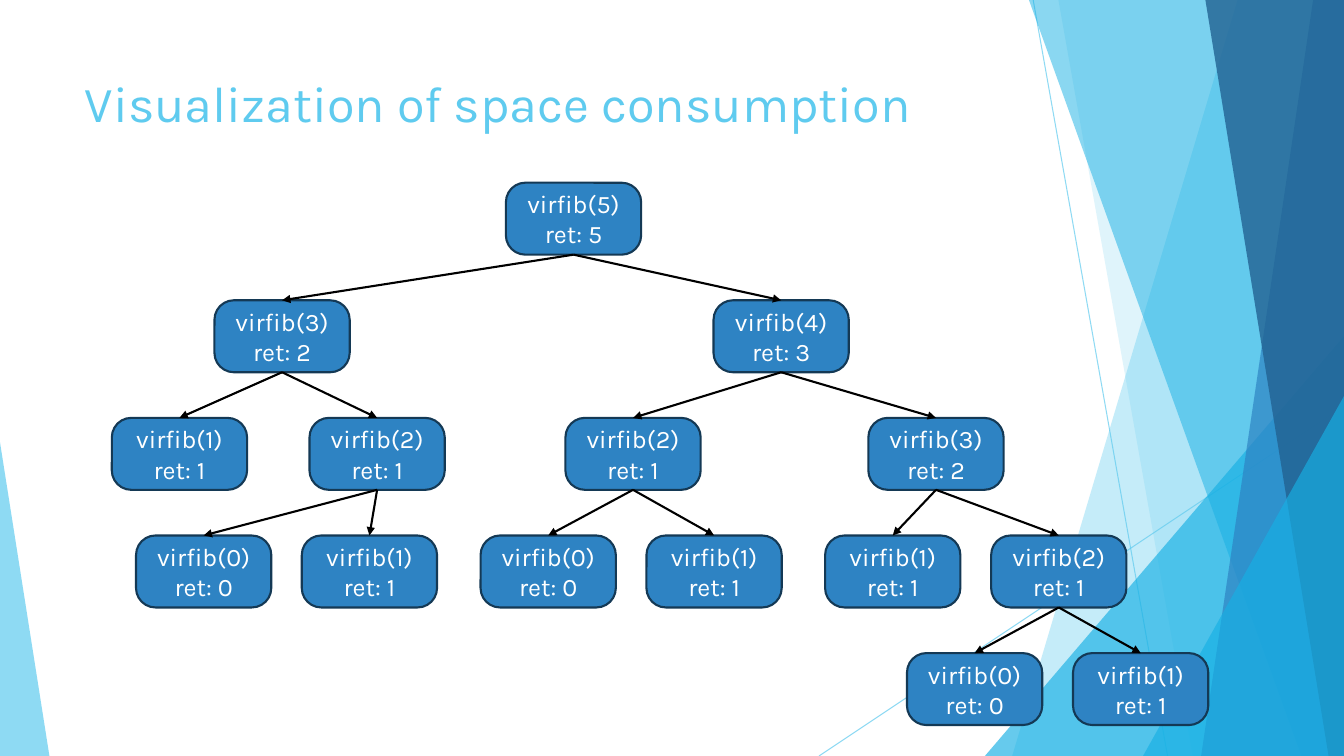
from collections import namedtuple

from lxml.etree import SubElement
from pptx import Presentation
from pptx.dml.color import RGBColor
from pptx.enum.shapes import MSO_CONNECTOR, MSO_SHAPE
from pptx.enum.text import MSO_ANCHOR, MSO_AUTO_SIZE, PP_ALIGN
from pptx.oxml.ns import qn
from pptx.util import Pt

Box = namedtuple("Box", "left top width height")
Call = namedtuple("Call", "number center children", defaults=[()])

COLORS = {
    "sky": "5FCBEF",
    "cyan": "17B0E4",
    "blue": "2E83C3",
    "navy": "226292",
    "outline": "143955",
    "black": "000000",
    "white": "FFFFFF",
}
TITLE_FONT = {"name": "Karla", "size": Pt(36), "bold": False}
NODE_FONT = {"name": "Karla", "size": Pt(18), "bold": False}
TITLE_FRAME = {
    "word_wrap": True,
    "auto_size": MSO_AUTO_SIZE.NONE,
    "vertical_anchor": MSO_ANCHOR.TOP,
}
NODE_FRAME = {"word_wrap": True, "vertical_anchor": MSO_ANCHOR.MIDDLE}
NODE_WIDTH, NODE_HEIGHT, LEVEL_STEP = 96.6, 51.4, 84

CALL_TREE = Call(5, 329.7, (
    Call(3, 121.5, (
        Call(1, 48.2),
        Call(2, 189.4, (Call(0, 65.5), Call(1, 183.9))),
    )),
    Call(4, 478, (
        Call(2, 372.2, (Call(0, 311.6), Call(1, 430.1))),
        Call(3, 588.6, (
            Call(1, 557.7),
            Call(2, 676.3, (Call(0, 616.2), Call(1, 734.8))),
        )),
    )),
))


def set_values(target, values):
    """Set each named attribute on the target."""
    for name, value in values.items():
        setattr(target, name, value)


def set_color(fill, color, opacity=100):
    """Make a fill solid with a palette colour and an opacity in percent."""
    fill.solid()
    fill.fore_color.rgb = RGBColor.from_string(COLORS[color])
    if opacity < 100:
        choice = fill._xPr.find(qn("a:solidFill"))[0]
        SubElement(choice, qn("a:alpha"), val=str(opacity * 1000))


def add_line(slide, ends, color, width, opacity=100):
    """Add a flat straight connector between two points."""
    line = slide.shapes.add_connector(
        MSO_CONNECTOR.STRAIGHT, *[Pt(value) for value in ends])
    set_color(line.line.fill, color, opacity)
    line.line.width = Pt(width)
    SubElement(line._element.spPr, qn("a:effectLst"))
    return line


def finish_panel(panel, color, opacity):
    """Give a background panel its translucent fill and no outline."""
    panel.shadow.inherit = False
    set_color(panel.fill, color, opacity)
    panel.line.fill.background()


def add_slanted_panel(slide, box, top_x, bottom_x, color, opacity):
    """Add a panel with a slanted left edge that fills the box to its right."""
    right, bottom = box.left + box.width, box.top + box.height
    builder = slide.shapes.build_freeform(
        Pt(box.left + top_x), Pt(box.top), scale=1.0)
    corners = [(right, box.top), (right, bottom), (box.left + bottom_x, bottom)]
    builder.add_line_segments([(Pt(x), Pt(y)) for x, y in corners], close=True)
    finish_panel(builder.convert_to_shape(), color, opacity)


def add_corner_triangle(slide, box, width, height, peak, color, opacity):
    """Add a right triangle at the bottom of the box, left (0) or right (1)."""
    left = box.left + (box.width - width) * peak
    top = box.top + box.height - height
    triangle = slide.shapes.add_shape(
        MSO_SHAPE.ISOSCELES_TRIANGLE, Pt(left), Pt(top), Pt(width), Pt(height))
    triangle.adjustments[0] = peak
    finish_panel(triangle, color, opacity)


def add_backdrop(slide, box):
    """Draw the faceted background within the box."""
    for x1, y1, x2, y2 in [(738, 0, 834, 540), (960, 290, 585, 540)]:
        ends = (box.left + x1, box.top + y1, box.left + x2, box.top + y2)
        add_line(slide, ends, "sky", 0.75, 70)
    add_slanted_panel(slide, box, 884, 723, "sky", 36)
    add_slanted_panel(slide, box, 756, 852, "sky", 20)
    add_corner_triangle(slide, box, 256.5, 300, 1, "cyan", 66)
    add_slanted_panel(slide, box, 735, 929.5, "cyan", 50)
    add_slanted_panel(slide, box, 938, 858, "blue", 70)
    add_slanted_panel(slide, box, 861, 949, "navy", 80)
    add_corner_triangle(slide, box, 143.5, 257, 1, "cyan", 66)
    add_corner_triangle(slide, box, 35.3, 224, 0, "sky", 70)


def write_lines(frame, lines, alignment, font, color):
    """Write one formatted paragraph for each line of text."""
    for index, text in enumerate(lines):
        para = frame.add_paragraph() if index else frame.paragraphs[0]
        para.alignment = alignment
        span = para.add_run()
        span.text = text
        set_values(span.font, font)
        span.font.color.rgb = RGBColor.from_string(COLORS[color])


def add_title(slide, box, text):
    """Place and format the title placeholder in the box."""
    title = slide.shapes.title
    set_values(title, {name: Pt(value) for name, value in box._asdict().items()})
    set_values(title.text_frame, TITLE_FRAME)
    write_lines(title.text_frame, [text], PP_ALIGN.LEFT, TITLE_FONT, "sky")


def fibonacci(number):
    """Return the Fibonacci number that a call yields."""
    return number if number < 2 else fibonacci(number - 1) + fibonacci(number - 2)


def add_node(slide, box, number):
    """Draw one call with its return value in the box."""
    node = slide.shapes.add_shape(
        MSO_SHAPE.ROUNDED_RECTANGLE, *[Pt(value) for value in box])
    node.adjustments[0] = 0.27
    node.shadow.inherit = False
    set_color(node.fill, "blue")
    set_color(node.line.fill, "outline")
    node.line.width = Pt(1.5)
    set_values(node.text_frame, NODE_FRAME)
    lines = [f"virfib({number})", f"ret: {fibonacci(number)}"]
    write_lines(node.text_frame, lines, PP_ALIGN.CENTER, NODE_FONT, "white")
    return node


def add_arrow(slide, parent, child):
    """Join a parent's bottom to a child's top with an arrow."""
    arrow = add_line(slide, (0, 0, 0, 0), "black", 1.5)
    arrow.begin_connect(parent, 2)
    arrow.end_connect(child, 0)
    SubElement(arrow.line._get_or_add_ln(), qn("a:tailEnd"), type="triangle")


def add_call_tree(slide, box, call, level=0):
    """Draw a call and everything below it, and return its node."""
    place = Box(box.left + call.center - NODE_WIDTH / 2,
                box.top + level * LEVEL_STEP, NODE_WIDTH, NODE_HEIGHT)
    node = add_node(slide, place, call.number)
    for child in call.children:
        add_arrow(slide, node, add_call_tree(slide, box, child, level + 1))
    return node


def main():
    """Build the deck and save it."""
    deck = Presentation()
    set_values(deck, {"slide_width": Pt(960), "slide_height": Pt(540)})
    page = deck.slides.add_slide(deck.slide_layouts[5])
    add_backdrop(page, Box(0, 0, 960, 540))
    add_title(page, Box(53.3, 48, 676.8, 104), "Visualization of space consumption")
    add_call_tree(page, Box(80, 130.5, 783, 387.4), CALL_TREE)
    deck.save("out.pptx")


if __name__ == "__main__":
    main()
